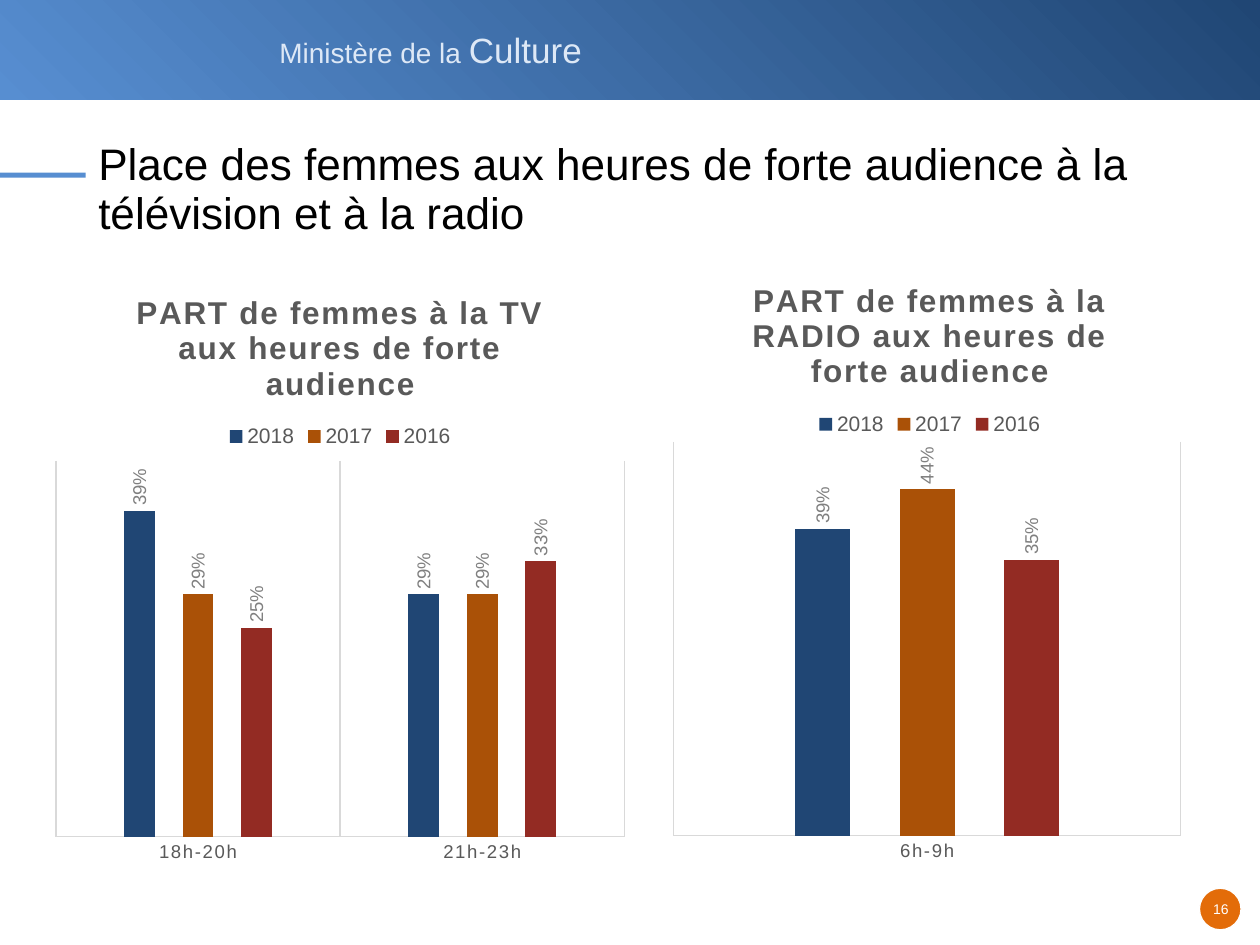
from lxml.etree import SubElement
from pptx import Presentation
from pptx.chart.data import CategoryChartData
from pptx.dml.color import RGBColor
from pptx.enum.chart import XL_CHART_TYPE as ChartType, XL_LABEL_POSITION as LabelPosition
from pptx.enum.chart import XL_LEGEND_POSITION as LegendPosition, XL_TICK_MARK as TickMark
from pptx.enum.shapes import MSO_SHAPE as Shape
from pptx.enum.text import MSO_ANCHOR as Anchor, PP_ALIGN as Align
from pptx.oxml.ns import qn
from pptx.util import Inches, Pt

FONT = "Arial"
NAVY, SKY, ORANGE = "204674", "578ED1", "E36C09"
TEXT, LABEL, RULE = "595959", "808080", "D9D9D9"
YEAR_COLORS = {"2018": NAVY, "2017": "AA5107", "2016": "932B23"}

TITLE = "Place des femmes aux heures de forte audience à la télévision et à la radio"
HEADER = [("Ministère de la ", 16), ("Culture", 20)]
CHARTS = [
    {
        "title": "PART de femmes à la TV aux heures de forte audience",
        "hours": ["18h-20h", "21h-23h"],
        "shares": {"2018": [0.39, 0.29], "2017": [0.29, 0.29], "2016": [0.25, 0.33]},
        "at": (0.35, 2.12, 4.7, 4.81),
        "plot": (0.02, 0.32, 0.96, 0.62),
        "top": 0.45,
    },
    {
        "title": "PART de femmes à la RADIO aux heures de forte audience",
        "hours": ["6h-9h"],
        "shares": {"2018": [0.39], "2017": [0.44], "2016": [0.35]},
        "at": (5.26, 2.02, 4.24, 4.96),
        "plot": (0.02, 0.3, 0.95, 0.63),
        "top": 0.5,
    },
]


def rgb(color):
    return RGBColor.from_string(color)


def style(font, size, color, bold=False):
    font.name, font.size, font.bold = FONT, Pt(size), bold
    font.color.rgb = rgb(color)


def add_block(page, kind, at, color=None):
    block = page.shapes.add_shape(kind, *map(Inches, at))
    block.shadow.inherit = False
    block.line.fill.background()
    if color:
        block.fill.solid()
        block.fill.fore_color.rgb = rgb(color)
    return block


def add_text(page, at, spans, color, align=Align.LEFT, inset=0.1):
    box = page.shapes.add_textbox(*map(Inches, at))
    frame = box.text_frame
    frame.word_wrap = False
    frame.margin_left = frame.margin_right = Inches(inset)
    para = frame.paragraphs[0]
    para.alignment = align
    for words, size in spans:
        span = para.add_run()
        span.text = words
        style(span.font, size, color)


def place_plot(chart, fractions):
    area = chart.plots[0]._element.getparent()
    for old in area.findall(qn("c:layout")):
        area.remove(old)
    layout = SubElement(area, qn("c:layout"))
    area.insert(0, layout)
    manual = SubElement(layout, qn("c:manualLayout"))
    settings = [("layoutTarget", "inner"), ("xMode", "edge"), ("yMode", "edge")]
    for tag, value in settings + list(zip("xywh", fractions)):
        SubElement(manual, qn("c:" + tag)).set("val", str(value))


def add_column_chart(page, item):
    data = CategoryChartData(number_format="0%")
    data.categories = item["hours"]
    for year, values in item["shares"].items():
        data.add_series(year, values)
    frame = page.shapes.add_chart(ChartType.COLUMN_CLUSTERED, *map(Inches, item["at"]), data)
    chart = frame.chart
    style(chart.font, 10, "000000")

    chart.has_title = True
    heading = chart.chart_title.text_frame
    heading.text = item["title"]
    span = heading.paragraphs[0].runs[0]
    style(span.font, 18, TEXT, bold=True)
    span._r.get_or_add_rPr().set("spc", "100")
    chart.chart_title.include_in_layout = False

    chart.has_legend = True
    chart.legend.position = LegendPosition.TOP
    chart.legend.include_in_layout = False
    style(chart.legend.font, 12, TEXT)

    hours = chart.category_axis
    hours.major_tick_mark = hours.minor_tick_mark = TickMark.NONE
    hours.has_major_gridlines = True
    for line in (hours.format.line, hours.major_gridlines.format.line):
        line.color.rgb = rgb(RULE)
        line.width = Pt(0.75)
    style(hours.tick_labels.font, 10.6, TEXT)
    for props in hours._element.iter(qn("a:defRPr")):
        props.set("spc", "100")

    scale = chart.value_axis
    scale.minimum_scale, scale.maximum_scale = 0, item["top"]
    scale.has_major_gridlines = False
    scale.visible = False

    plot = chart.plots[0]
    plot.vary_by_categories = False
    plot.gap_width, plot.overlap = 444, -90
    for series in plot.series:
        series.format.fill.solid()
        series.format.fill.fore_color.rgb = rgb(YEAR_COLORS[series.name])
        labels = series.data_labels
        labels.show_value = True
        labels.position = LabelPosition.OUTSIDE_END
        labels.number_format, labels.number_format_is_linked = "0%", False
        style(labels.font, 10.6, LABEL)
        for body in labels._element.iter(qn("a:bodyPr")):
            body.set("rot", "-5400000")
            body.set("vert", "horz")
    place_plot(chart, item["plot"])


def main():
    deck = Presentation()
    deck.slide_width, deck.slide_height = Inches(10), Inches(7.5)
    page = deck.slides.add_slide(deck.slide_layouts[5])

    banner = add_block(page, Shape.RECTANGLE, (0, 0, 10, 0.79))
    banner.fill.gradient()
    banner.fill.gradient_angle = 225
    for stop, color in zip(banner.fill.gradient_stops, (NAVY, SKY)):
        stop.color.rgb = rgb(color)
    add_text(page, (2.12, 0.18, 2.63, 0.44), HEADER, "DDE8F6")

    add_block(page, Shape.RECTANGLE, (0, 1.37, 0.68, 0.04), SKY)
    badge = add_block(page, Shape.OVAL, (9.52, 7.05, 0.33, 0.33), ORANGE)
    badge.line.color.rgb = rgb("FFFFFF")
    badge.line.width = Pt(0.75)
    add_text(page, (9.54, 7.1, 0.3, 0.23), [("16", 8)], "FFFFFF", Align.CENTER, 0.05)

    title = page.shapes.title
    title.left, title.top, title.width, title.height = map(Inches, (0.68, 1.06, 8.88, 0.81))
    title.text_frame.text = TITLE
    title.text_frame.vertical_anchor = Anchor.TOP
    para = title.text_frame.paragraphs[0]
    para.alignment, para.line_spacing = Align.LEFT, Pt(28)
    style(para.runs[0].font, 25.2, "000000")

    for item in CHARTS:
        add_column_chart(page, item)
    deck.save("out.pptx")


if __name__ == "__main__":
    main()
